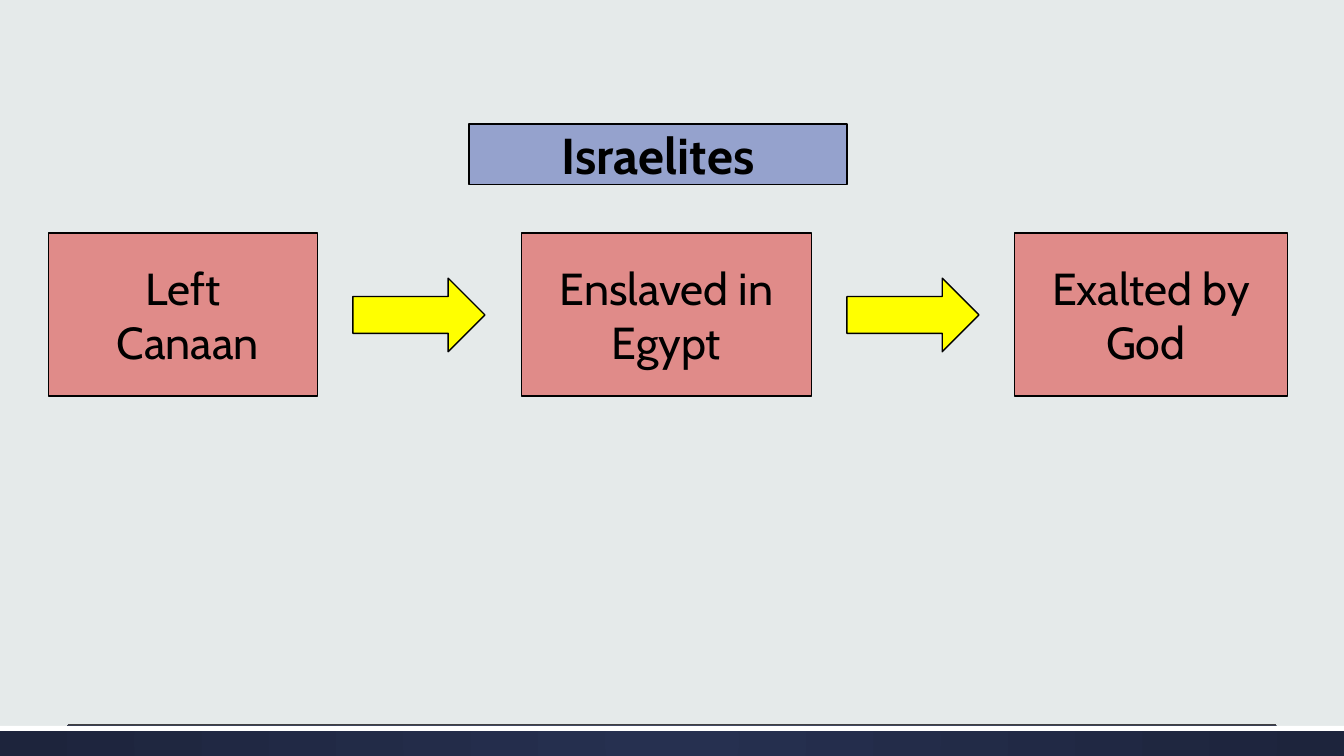
from dataclasses import dataclass

from lxml import etree
from pptx import Presentation
from pptx.dml.color import RGBColor
from pptx.enum import shapes, text
from pptx.oxml import ns
from pptx.util import Inches, Pt


@dataclass(frozen=True)
class Theme:
    font: str = "Cabin"
    heading_size: int = 36
    stage_size: int = 32
    outline_width: float = 1
    rule_width: float = 0.5
    background: str = "E5EAEA"
    ink: str = "000000"
    heading: str = "95A2CD"
    stage: str = "E08B89"
    arrow: str = "FFFF00"
    strip: str = "FFFFFF"
    rule: str = "404040"
    footer_center: str = "263050"
    footer_edge: str = "1D243C"


THEME = Theme()


def rgb(value):
    return RGBColor.from_string(value)


def paint(shape, color):
    shape.fill.solid()
    shape.fill.fore_color.rgb = rgb(color)


def outline(shape):
    shape.line.color.rgb = rgb(THEME.ink)
    shape.line.width = Pt(THEME.outline_width)


def write(shape, lines, size, bold=False):
    frame = shape.text_frame
    frame.word_wrap = True
    frame.auto_size = text.MSO_AUTO_SIZE.NONE
    frame.vertical_anchor = text.MSO_ANCHOR.MIDDLE
    for index, line in enumerate(lines):
        paragraph = frame.add_paragraph() if index else frame.paragraphs[0]
        paragraph.alignment = text.PP_ALIGN.CENTER
        run = paragraph.add_run()
        run.text = line
        run.font.name = THEME.font
        run.font.size = Pt(size)
        run.font.bold = bold
        run.font.color.rgb = rgb(THEME.ink)


def add_block(slide, kind, left, top, width, height):
    block = slide.shapes.add_shape(
        kind, Inches(left), Inches(top), Inches(width), Inches(height)
    )
    block.shadow.inherit = False
    return block


def add_footer(slide):
    rectangle = shapes.MSO_SHAPE.RECTANGLE
    band = add_block(slide, rectangle, 0, 7.2, 13.33, 0.3)
    band.line.fill.background()
    band.fill.gradient()
    for stop, color in zip(
        band.fill.gradient_stops, (THEME.footer_center, THEME.footer_edge)
    ):
        stop.color.rgb = rgb(color)
    gradient = band._element.spPr.find(ns.qn("a:gradFill"))
    gradient.remove(gradient.find(ns.qn("a:lin")))
    radial = etree.SubElement(gradient, ns.qn("a:path"), {"path": "circle"})
    center = dict.fromkeys("ltrb", "50000")
    etree.SubElement(radial, ns.qn("a:fillToRect"), center)

    strip = add_block(slide, rectangle, 0, 7.2, 13.33, 0.05)
    paint(strip, THEME.strip)
    strip.line.fill.background()

    rule = slide.shapes.add_connector(
        shapes.MSO_CONNECTOR.STRAIGHT,
        Inches(0.67), Inches(7.19), Inches(12.66), Inches(7.19),
    )
    rule.line.color.rgb = rgb(THEME.rule)
    rule.line.width = Pt(THEME.rule_width)
    etree.SubElement(rule._element.spPr, ns.qn("a:effectLst"))


def add_heading(slide, heading):
    title = slide.shapes.title
    title.left, title.top = Inches(4.65), Inches(1.23)
    title.width, title.height = Inches(3.75), Inches(0.6)
    paint(title, THEME.heading)
    outline(title)
    write(title, [heading], THEME.heading_size, bold=True)


def add_stage(slide, left, width, lines):
    stage = add_block(slide, shapes.MSO_SHAPE.RECTANGLE, left, 2.31, width, 1.62)
    paint(stage, THEME.stage)
    outline(stage)
    write(stage, lines, THEME.stage_size)


def add_arrow(slide, left):
    arrow = add_block(slide, shapes.MSO_SHAPE.RIGHT_ARROW, left, 2.76, 1.31, 0.73)
    paint(arrow, THEME.arrow)
    outline(arrow)


def main():
    deck = Presentation()
    deck.slide_width, deck.slide_height = Inches(13.33), Inches(7.5)
    slide = deck.slides.add_slide(deck.slide_layouts.get_by_name("Title Only"))
    slide.background.fill.solid()
    slide.background.fill.fore_color.rgb = rgb(THEME.background)

    add_footer(slide)
    add_heading(slide, "Israelites")
    stages = (
        (0.48, 2.67, ["Left", " Canaan"]),
        (5.17, 2.88, ["Enslaved in Egypt"]),
        (10.06, 2.71, ["Exalted by God "]),
    )
    for left, width, lines in stages:
        add_stage(slide, left, width, lines)
    for left, width, _ in stages[:-1]:
        add_arrow(slide, left + width + 0.35)

    deck.save("out.pptx")


if __name__ == "__main__":
    main()
